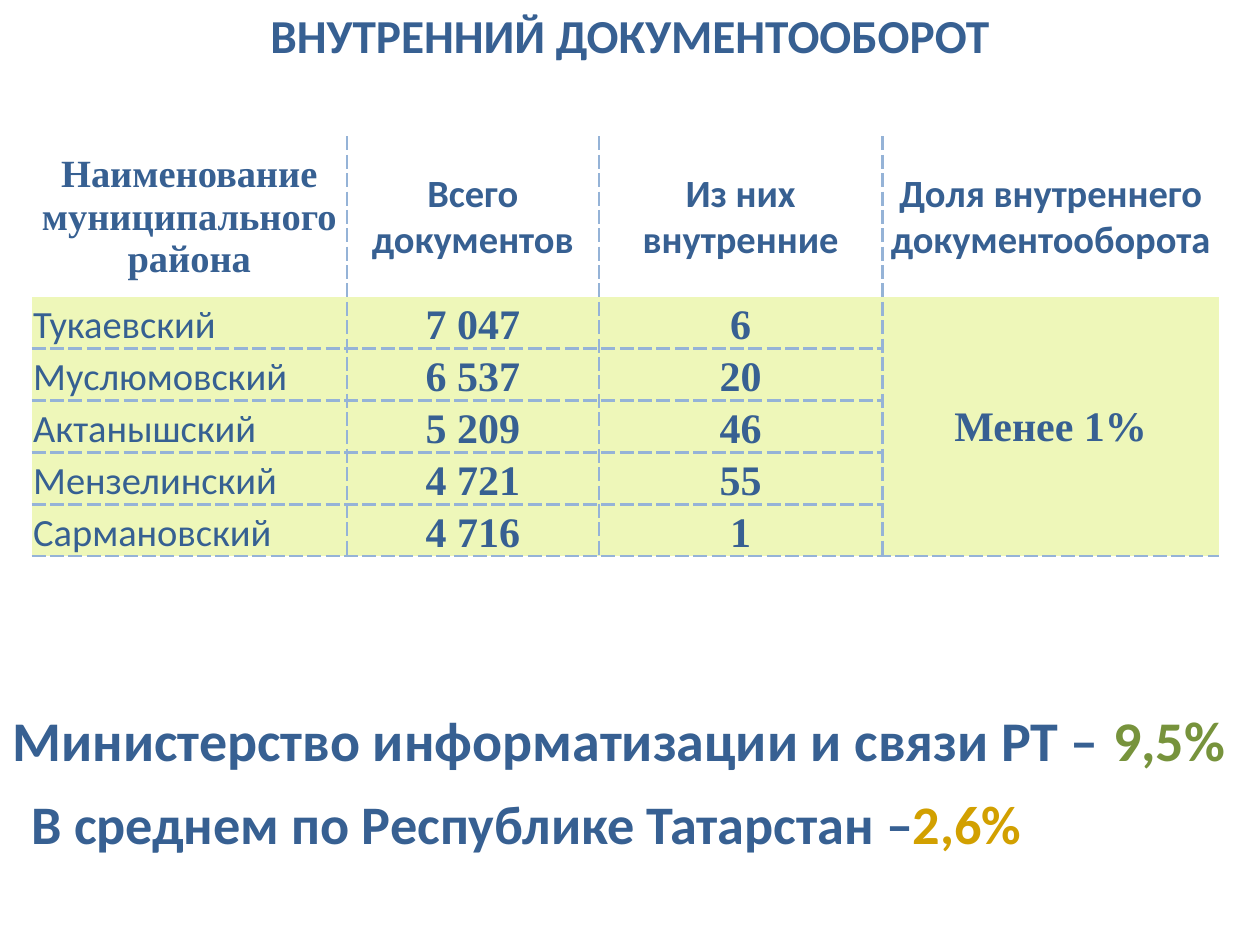
"""Build the slide on internal document flow by municipal district."""
from lxml import etree
from pptx import Presentation
from pptx import util as u
from pptx.dml.color import RGBColor
from pptx.enum import text
from pptx.oxml import ns

COLORS = {
    "blue": "376092", "name": "366092", "green": "77933C", "gold": "D2A000",
    "border": "95B3D7", "body": "EEF7B9", "white": "FFFFFF",
}
SANS, SERIF = "Calibri", "Times New Roman"
HEADERS = ["Наименование муниципального района", "Всего документов",
           "Из них внутренние", "Доля внутреннего документооборота"]
DISTRICTS = [
    ("Тукаевский", "7 047", "6"),
    ("Муслюмовский", "6 537", "20"),
    ("Актанышский", "5 209", "46"),
    ("Мензелинский", "4 721", "55"),
    ("Сармановский", "4 716", "1"),
]
COL_WIDTHS = [6.35, 5.08, 5.72, 6.78]
HEADER_HEIGHT, ROW_HEIGHT = 3.23, 1.04
CENTER, LEFT = text.PP_ALIGN.CENTER, text.PP_ALIGN.LEFT


def rgb(name):
    """Return the named colour."""
    return RGBColor.from_string(COLORS[name])


def set_font(font, size, name=SANS, color="blue", bold=True):
    """Set the face, size, colour and weight of a font."""
    font.name, font.size, font.bold = name, u.Pt(size), bold
    font.color.rgb = rgb(color)


def add_line(slide, box, size, parts, align=LEFT):
    """Add a one-line text box made of (wording, colour) parts."""
    tf = slide.shapes.add_textbox(*map(u.Cm, box)).text_frame
    tf.word_wrap = True
    tf.auto_size = text.MSO_AUTO_SIZE.SHAPE_TO_FIT_TEXT
    p = tf.paragraphs[0]
    p.alignment = align
    set_font(p.font, size, color=parts[0][1])
    for wording, color in parts:
        r = p.add_run()
        r.text = wording
        set_font(r.font, size, color=color)


def set_borders(cell, sides):
    """Draw dashed lines on the given sides and none on the others."""
    tc_pr = cell._tc.get_or_add_tcPr()
    for i, side in enumerate("LRTB"):
        ln = etree.Element(ns.qn(f"a:ln{side}"), w=str(u.Pt(1.5)))
        if side in sides:
            fill = etree.SubElement(ln, ns.qn("a:solidFill"))
            etree.SubElement(fill, ns.qn("a:srgbClr"), val=COLORS["border"])
            etree.SubElement(ln, ns.qn("a:prstDash"), val="sysDash")
        else:
            etree.SubElement(ln, ns.qn("a:noFill"))
        tc_pr.insert(i, ln)


def border_sides(row, col):
    """Return the sides of a cell that carry a dashed line."""
    last_col = col == len(HEADERS) - 1
    sides = "L" if col else ""
    if not last_col:
        sides += "R"
    if row > 1 and not last_col:
        sides += "T"
    if row and (not last_col or row in (1, len(DISTRICTS))):
        sides += "B"
    return sides


def fill_cell(cell, wording, anchor, align=CENTER, **font):
    """Write formatted text into a cell."""
    cell.vertical_anchor = anchor
    p = cell.text_frame.paragraphs[0]
    p.text, p.alignment = wording, align
    set_font(p.font, **font)


def add_district_table(slide):
    """Add the table of districts with the merged share column."""
    n_rows, n_cols = len(DISTRICTS) + 1, len(HEADERS)
    height = HEADER_HEIGHT + ROW_HEIGHT * len(DISTRICTS)
    table = slide.shapes.add_table(
        n_rows, n_cols, u.Cm(0.64), u.Cm(2.75),
        u.Cm(sum(COL_WIDTHS)), u.Cm(height)).table
    table.first_row = table.horz_banding = False
    for column, width in zip(table.columns, COL_WIDTHS):
        column.width = u.Cm(width)
    for i, row in enumerate(table.rows):
        row.height = u.Cm(ROW_HEIGHT if i else HEADER_HEIGHT)
        for j, cell in enumerate(row.cells):
            cell.margin_left = cell.margin_right = cell.margin_top = u.Cm(0.03)
            cell.margin_bottom = 0
            cell.fill.solid()
            cell.fill.fore_color.rgb = rgb("body" if i else "white")
            set_borders(cell, border_sides(i, j))

    middle, bottom = text.MSO_ANCHOR.MIDDLE, text.MSO_ANCHOR.BOTTOM
    for j, header in enumerate(HEADERS):
        fill_cell(table.cell(0, j), header, middle, size=22,
                  name=SANS if j else SERIF)
    for i, (district, *counts) in enumerate(DISTRICTS, 1):
        fill_cell(table.cell(i, 0), district, bottom, LEFT, size=22,
                  color="name", bold=False)
        for j, count in enumerate(counts, 1):
            fill_cell(table.cell(i, j), count, bottom, size=24, name=SERIF)
    share = table.cell(1, n_cols - 1)
    share.merge(table.cell(n_rows - 1, n_cols - 1))
    fill_cell(share, "Менее 1%", middle, size=24, name=SERIF)


def main():
    """Build and save the slide."""
    prs = Presentation()
    prs.slide_width, prs.slide_height = u.Cm(25.4), u.Cm(19.05)
    slide = prs.slides.add_slide(prs.slide_layouts[6])
    add_line(slide, (0, 0, 25.4, 1.42), 27,
             [("ВНУТРЕННИЙ ДОКУМЕНТООБОРОТ", "blue")], CENTER)
    add_district_table(slide)
    add_line(slide, (0.03, 15.8, 21.16, 1.63), 31,
             [("В среднем по Республике Татарстан –", "blue"),
              ("2,6%", "gold")], CENTER)
    add_line(slide, (0, 14.1, 25.83, 1.63), 32,
             [("Министерство информатизации и связи РТ – ", "blue"),
              ("9,5%", "green")])
    prs.save("out.pptx")


if __name__ == "__main__":
    main()
